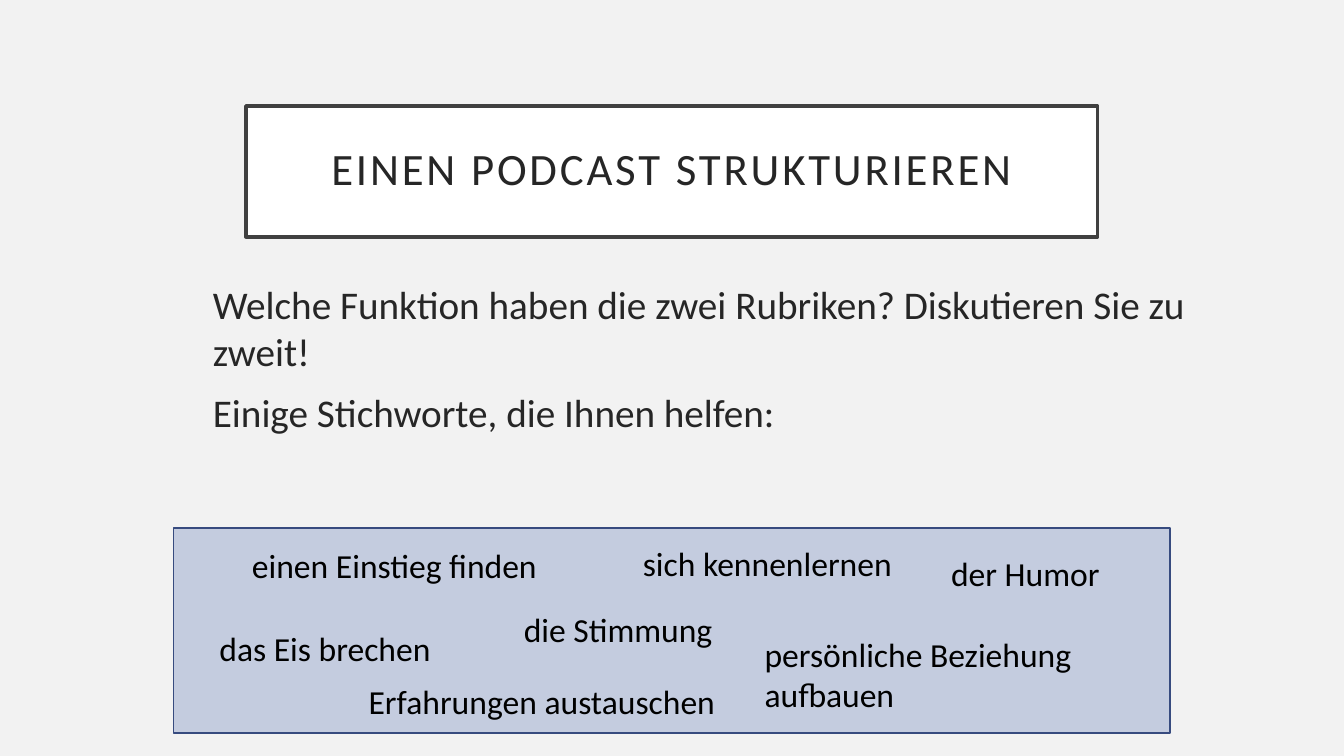
import pptx
import pptx.util
import pptx.dml.color
import pptx.enum.shapes
import pptx.enum.text
import pptx.oxml.ns
from lxml import etree

Cm = pptx.util.Cm
Pt = pptx.util.Pt
RGBColor = pptx.dml.color.RGBColor

BACK = RGBColor(0xF2, 0xF2, 0xF2)
WHITE = RGBColor(0xFF, 0xFF, 0xFF)
BLACK = RGBColor(0x00, 0x00, 0x00)
INK = RGBColor(0x26, 0x26, 0x26)
FRAME = RGBColor(0x40, 0x40, 0x40)
BLUE = RGBColor(0x4A, 0x66, 0xAC)
NAVY = RGBColor(0x37, 0x4B, 0x7F)

FONT = "Calibri"

TASKS = [
    "Welche Funktion haben die zwei Rubriken? Diskutieren Sie zu zweit!",
    "Einige Stichworte, die Ihnen helfen:",
]

# Cue, left, top, width, lines
CUES = [
    ("einen Einstieg finden", 6.1, 13.61, 7.95, 1),
    ("der Humor", 23.72, 13.82, 5.56, 1),
    ("die Stimmung", 12.95, 15.21, 5.56, 1),
    ("persönliche Beziehung aufbauen", 19.02, 15.85, 10.26, 2),
    ("Erfahrungen austauschen", 9.04, 17.04, 11.07, 1),
    ("sich kennenlernen", 15.95, 13.56, 6.96, 1),
    ("das Eis brechen", 5.28, 15.7, 6.91, 1),
]


def add_sub(parent, tag, **attrs):
    return etree.SubElement(parent, pptx.oxml.ns.qn(tag), **attrs)


def place(shape, left, top, width, height):
    shape.left, shape.top = Cm(left), Cm(top)
    shape.width, shape.height = Cm(width), Cm(height)


def paint(shape, fill, line, weight):
    shape.fill.solid()
    shape.fill.fore_color.rgb = fill
    shape.line.color.rgb = line
    shape.line.width = Pt(weight)


def add_run(para, text, size, color):
    run = para.add_run()
    run.text = text
    run.font.name = FONT
    run.font.size = Pt(size)
    run.font.color.rgb = color
    return run


def set_title(slide, text):
    title = slide.shapes.title
    place(title, 6.2, 2.67, 21.46, 3.3)
    paint(title, WHITE, FRAME, 2.5)
    frame = title.text_frame
    frame.auto_size = pptx.enum.text.MSO_AUTO_SIZE.NONE
    frame.vertical_anchor = pptx.enum.text.MSO_ANCHOR.MIDDLE
    frame.margin_left = frame.margin_right = Cm(0.51)
    frame.margin_top = frame.margin_bottom = Cm(0.51)
    para = frame.paragraphs[0]
    para.alignment = pptx.enum.text.PP_ALIGN.CENTER
    para.line_spacing = 0.9
    run = add_run(para, text, 32, INK)
    run.font._element.set("spc", "200")


def set_body(slide, lines):
    body = slide.placeholders[1]
    place(body, 5.11, 6.93, 25.5, 5.13)
    frame = body.text_frame
    frame.auto_size = pptx.enum.text.MSO_AUTO_SIZE.NONE
    for index, text in enumerate(lines):
        para = frame.add_paragraph() if index else frame.paragraphs[0]
        para.space_before = Pt(10 if index else 0)
        props = para._p.get_or_add_pPr()
        props.set("marL", "0")
        props.set("indent", "0")
        add_sub(props, "a:buNone")
        add_run(para, text, 28, INK)


def add_panel(slide):
    kind = pptx.enum.shapes.MSO_SHAPE.RECTANGLE
    panel = slide.shapes.add_shape(kind, Cm(4.37), Cm(13.31), Cm(25.12), Cm(5.16))
    panel.shadow.inherit = False
    paint(panel, BLUE, NAVY, 1)
    # Let the background shine through
    color = panel._element.spPr.find(".//" + pptx.oxml.ns.qn("a:srgbClr"))
    add_sub(color, "a:alpha", val="27000")


def add_cue(slide, text, left, top, width, lines):
    height = 0.23 + 1.04 * lines
    box = slide.shapes.add_textbox(Cm(left), Cm(top), Cm(width), Cm(height))
    frame = box.text_frame
    frame.word_wrap = True
    frame.auto_size = pptx.enum.text.MSO_AUTO_SIZE.SHAPE_TO_FIT_TEXT
    add_run(frame.paragraphs[0], text, 24, BLACK)


def main():
    deck = pptx.Presentation()
    deck.slide_width, deck.slide_height = Cm(33.87), Cm(19.05)
    slide = deck.slides.add_slide(deck.slide_layouts[1])
    slide.background.fill.solid()
    slide.background.fill.fore_color.rgb = BACK

    # Heading and task
    set_title(slide, "EINEN PODCAST STRUKTURIEREN")
    set_body(slide, TASKS)

    # Cue words on the panel
    add_panel(slide)
    for cue in CUES:
        add_cue(slide, *cue)

    deck.save("out.pptx")


if __name__ == "__main__":
    main()
